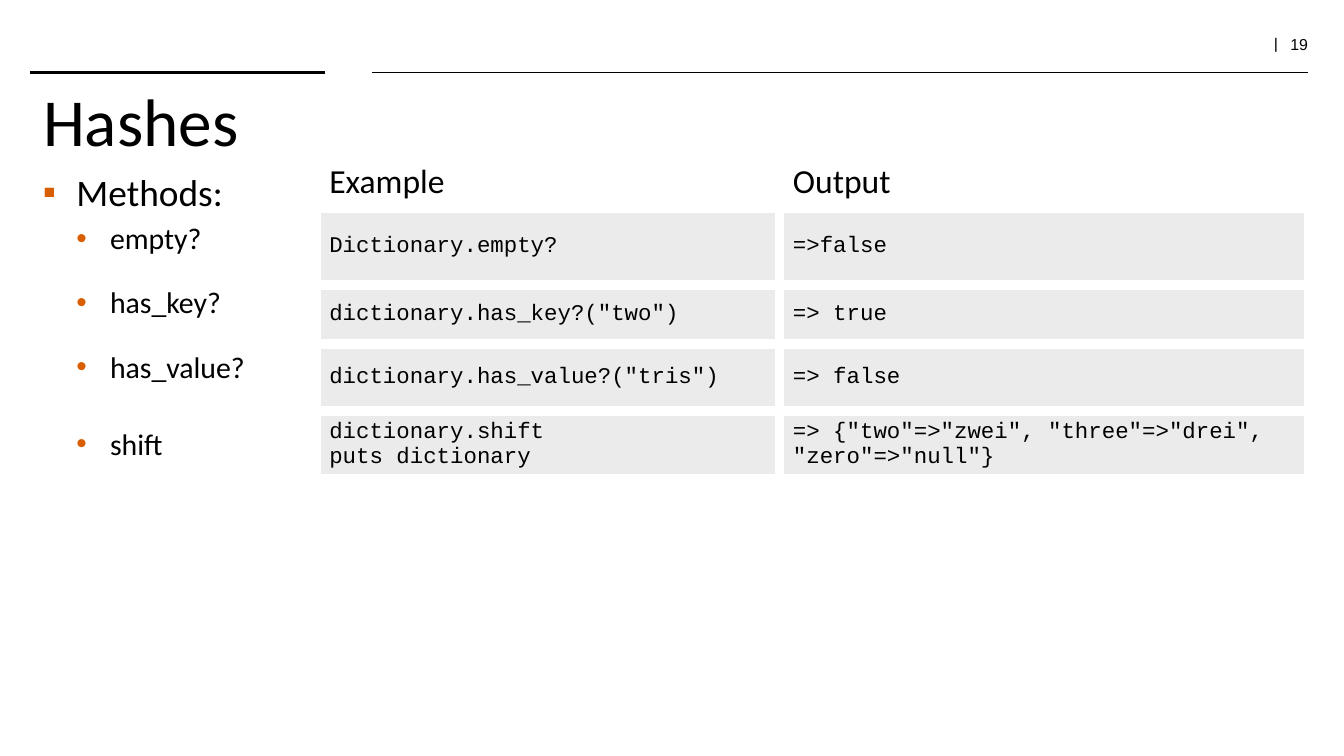
from lxml import etree
from pptx import Presentation
from pptx.dml.color import RGBColor
from pptx.enum.shapes import MSO_CONNECTOR
from pptx.enum.text import MSO_ANCHOR, PP_ALIGN
from pptx.oxml import parse_xml
from pptx.oxml.ns import nsdecls, qn
from pptx.util import Inches, Pt

BLACK = RGBColor(0x00, 0x00, 0x00)
GREY = RGBColor(0xEB, 0xEB, 0xEB)
ORANGE = RGBColor(0xD9, 0x5E, 0x00)
WHITE = RGBColor(0xFF, 0xFF, 0xFF)
STRAIGHT = MSO_CONNECTOR.STRAIGHT
TOP, MIDDLE = MSO_ANCHOR.TOP, MSO_ANCHOR.MIDDLE
LEFT, RIGHT = PP_ALIGN.LEFT, PP_ALIGN.RIGHT


def add_run(para, text, size, font="Calibri"):
    run = para.add_run()
    run.text = text
    run.font.size = Pt(size)
    run.font.name = font
    run.font.color.rgb = BLACK


def add_bullet(para, char, indent):
    props = para._p.get_or_add_pPr()
    props.set("marL", str(Inches(indent)))
    props.set("indent", str(Inches(-0.25)))
    color = etree.SubElement(props, qn("a:buClr"))
    etree.SubElement(color, qn("a:srgbClr"), val=str(ORANGE))
    etree.SubElement(props, qn("a:buFont"), typeface="Arial")
    etree.SubElement(props, qn("a:buChar"), char=char)


# A 16:9 slide
prs = Presentation()
prs.slide_width = Inches(10)
prs.slide_height = prs.slide_width * 9 // 16
slide = prs.slides.add_slide(prs.slide_layouts[5])
shapes = slide.shapes

# Page number and header rules
box = shapes.add_textbox(Inches(8.81), Inches(0.23), Inches(1.02), Inches(0.22))
box.text_frame.word_wrap = True
para = box.text_frame.paragraphs[0]
para.alignment = RIGHT
para.line_spacing = 0.8
add_run(para, "|  ", 9, "TeX Gyre Schola")
add_run(para, "19", 8.5, "Arial")

for start, end, width in [(0.22, 2.42, 2), (2.77, 9.73, 1)]:
    rule = shapes.add_connector(
        STRAIGHT, Inches(start), Inches(0.54), Inches(end), Inches(0.54))
    rule.line.color.rgb = BLACK
    rule.line.width = Pt(width)
    etree.SubElement(rule._element.spPr, qn("a:effectLst"))

# Title
title = shapes.title
title.left, title.top = Inches(0.22), Inches(0.54)
title.width, title.height = Inches(9.51), Inches(0.57)
title.text_frame.vertical_anchor = TOP
para = title.text_frame.paragraphs[0]
para.alignment = LEFT
add_run(para, "Hashes", 36)

# Method list, spaced to line up with the table rows
box = shapes.add_textbox(Inches(0.22), Inches(1.21), Inches(6.01), Inches(3.67))
frame = box.text_frame
frame.word_wrap = True
para = frame.paragraphs[0]
add_bullet(para, "▪", 0.25)
add_run(para, "Methods:", 20)
methods = [("empty?", 3.2), ("has_key?", 15.2), ("has_value?", 15.2), ("shift", 22)]
for name, gap in methods:
    para = frame.add_paragraph()
    para.level = 1
    add_bullet(para, "•", 0.5)
    para.space_before = Pt(gap)
    add_run(para, name, 16)

# Table of examples
rows = [
    ("Example", "Output"),
    ("Dictionary.empty?", "=>false"),
    ('dictionary.has_key?("two")', "=> true"),
    ('dictionary.has_value?("tris")', "=> false"),
    ("dictionary.shift\nputs dictionary",
     '=> {"two"=>"zwei", "three"=>"drei", "zero"=>"null"}'),
]
table = shapes.add_table(
    len(rows), 2, Inches(2.35), Inches(1.15), Inches(7.39), Inches(2.4)).table
table.first_row = table.horz_banding = False
for col, width in zip(table.columns, [3.45, 3.94]):
    col.width = Inches(width)
for row, height in zip(table.rows, [0.39, 0.57, 0.44, 0.5, 0.5]):
    row.height = Inches(height)

for r, texts in enumerate(rows):
    for c, text in enumerate(texts):
        cell = table.cell(r, c)
        size, font = (12, "Courier New") if r else (18, "Calibri")
        for i, line in enumerate(text.split("\n")):
            frame = cell.text_frame
            para = frame.add_paragraph() if i else frame.paragraphs[0]
            add_run(para, line, size, font)
        props = cell._tc.get_or_add_tcPr()
        for side in ("lnL", "lnR", "lnT", "lnB"):
            props.append(parse_xml(
                f'<a:{side} {nsdecls("a")} w="{Pt(6)}"><a:solidFill>'
                f'<a:srgbClr val="{WHITE}"/></a:solidFill></a:{side}>'))
        if r:
            cell.vertical_anchor = MIDDLE
            cell.fill.solid()
            cell.fill.fore_color.rgb = GREY
        else:
            cell.fill.background()

prs.save("out.pptx")
